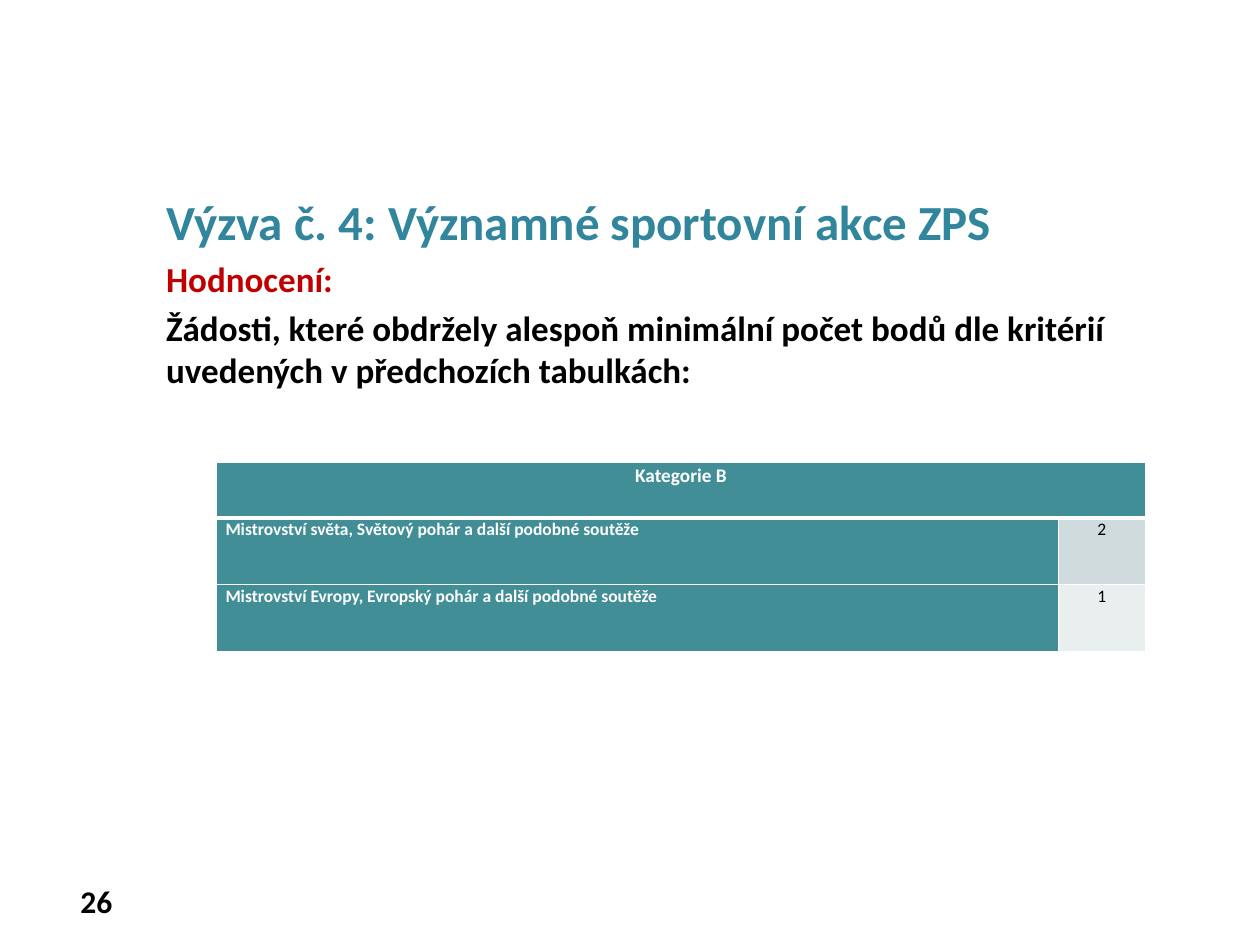
from lxml import etree
from pptx import Presentation
from pptx.dml.color import RGBColor
from pptx.enum.text import MSO_ANCHOR as Anchor, PP_ALIGN as Align
from pptx.oxml.ns import qn
from pptx.util import Inches, Pt

FONT = "Calibri"
COLORS = {
    "heading": "31859C",
    "accent": "C00000",
    "black": "000000",
    "white": "FFFFFF",
    "teal": "418E96",
    "score_dark": "CFDBDD",
    "score_light": "E9EEEF",
}
CRITERIA = [
    ("Mistrovství světa, Světový pohár a další podobné soutěže", "2", "score_dark"),
    ("Mistrovství Evropy, Evropský pohár a další podobné soutěže", "1", "score_light"),
]


def rgb(name):
    return RGBColor.from_string(COLORS[name])


def write(paragraph, text, size=20, color="black", bold=True,
          align=Align.LEFT, before=0, spacing=None):
    paragraph.alignment = align
    paragraph.space_before = Pt(before)
    if spacing:
        paragraph.line_spacing = spacing
    run = paragraph.add_run()
    run.text = text
    run.font.name = FONT
    run.font.size = Pt(size)
    run.font.bold = bold
    run.font.color.rgb = rgb(color)


def add_text(slide, left, top, width, height, lines, anchor=Anchor.TOP):
    frame = slide.shapes.add_textbox(
        Inches(left), Inches(top), Inches(width), Inches(height)).text_frame
    frame.word_wrap = True
    frame.vertical_anchor = anchor
    for index, (text, style) in enumerate(lines):
        paragraph = frame.add_paragraph() if index else frame.paragraphs[0]
        write(paragraph, text, **style)


def set_borders(cell, bottom=1):
    properties = cell._tc.get_or_add_tcPr()
    widths = {"a:lnL": 1, "a:lnR": 1, "a:lnT": 1, "a:lnB": bottom}
    for position, (side, width) in enumerate(widths.items()):
        line = etree.Element(qn(side), w=str(Pt(width)))
        fill = etree.SubElement(line, qn("a:solidFill"))
        etree.SubElement(fill, qn("a:srgbClr"), val=COLORS["white"])
        properties.insert(position, line)


def fill_cell(cell, text, fill, bottom=1, **style):
    cell.margin_left = cell.margin_right = Inches(0.07)
    cell.margin_top = cell.margin_bottom = 0
    cell.fill.solid()
    cell.fill.fore_color.rgb = rgb(fill)
    set_borders(cell, bottom)
    write(cell.text_frame.paragraphs[0], text, spacing=1.07, **style)


def add_criteria_table(slide):
    table = slide.shapes.add_table(
        3, 2, Inches(1.72), Inches(3.67), Inches(7.37), Inches(1.5)).table
    for column, width in zip(table.columns, (6.68, 0.69)):
        column.width = Inches(width)
    for row, height in zip(table.rows, (0.44, 0.53, 0.53)):
        row.height = Inches(height)

    category = table.cell(0, 0)
    category.merge(table.cell(0, 1))
    set_borders(table.cell(0, 1), bottom=3)
    fill_cell(category, "Kategorie B", "teal", bottom=3,
              size=11, color="white", align=Align.CENTER)
    for row, (criterion, points, shade) in enumerate(CRITERIA, start=1):
        fill_cell(table.cell(row, 0), criterion, "teal", size=10, color="white")
        fill_cell(table.cell(row, 1), points, shade,
                  size=10, bold=False, align=Align.CENTER)


def main():
    deck = Presentation()
    deck.slide_width, deck.slide_height = Inches(10), Inches(7.5)
    slide = deck.slides.add_slide(deck.slide_layouts[6])
    add_text(slide, 0.28, 6.95, 0.71, 0.4,
             [("26", {"size": 18, "align": Align.RIGHT})], Anchor.MIDDLE)
    add_text(slide, 1.22, 1.47, 8.28, 5.75, [
        ("Výzva č. 4: Významné sportovní akce ZPS", {"size": 28, "color": "heading"}),
        ("Hodnocení:", {"color": "accent", "before": 4}),
        ("Žádosti, které obdržely alespoň minimální počet bodů dle kritérií "
         "uvedených v předchozích tabulkách:", {"before": 4}),
    ])
    add_criteria_table(slide)
    deck.save("out.pptx")


if __name__ == "__main__":
    main()
